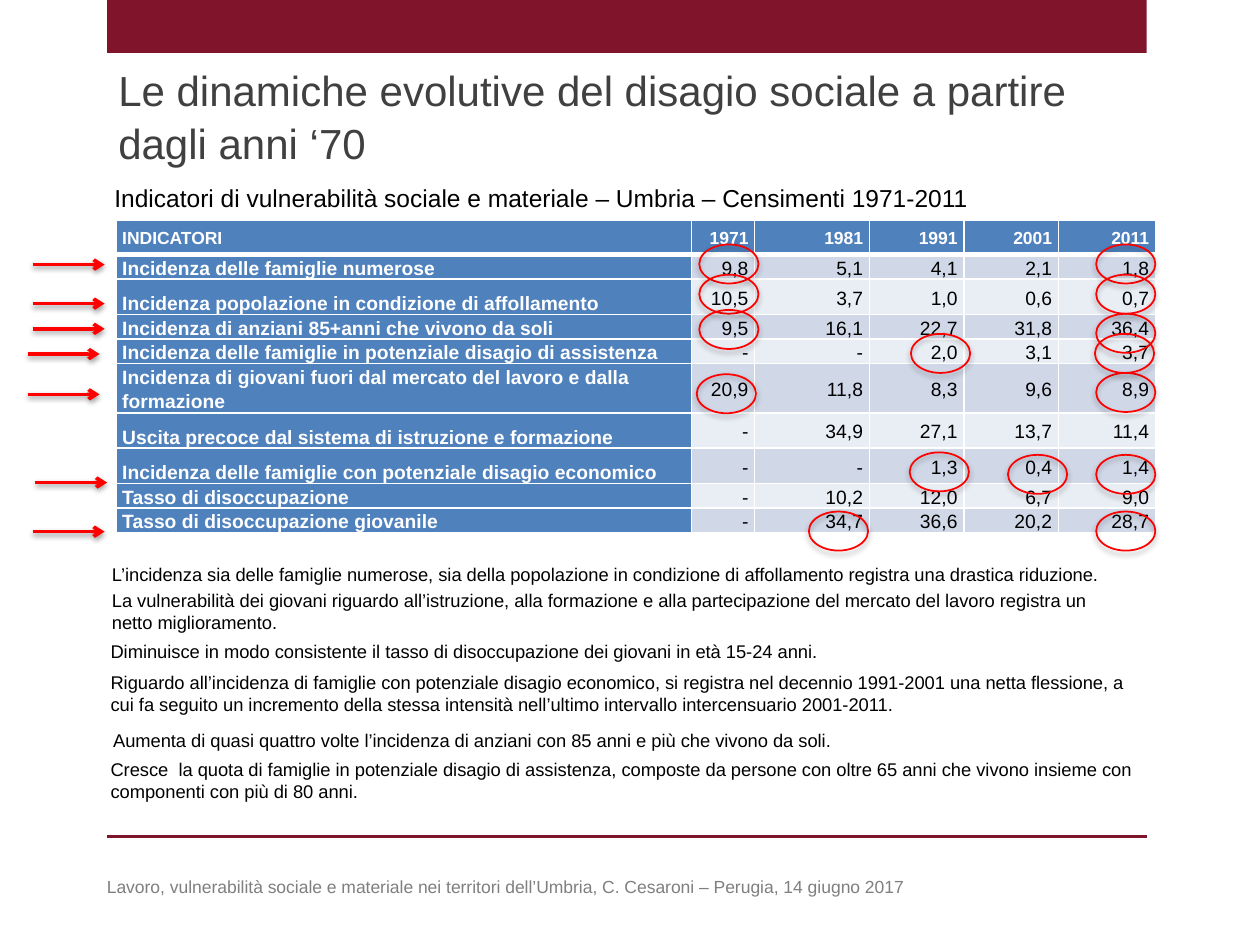
from lxml import etree
from pptx import Presentation, util as u
from pptx.dml import color
from pptx.enum import shapes, text
from pptx.oxml import ns

WINE, BLUE, RED, WHITE, BLACK = "7F142A", "4F81BD", "FF0000", "FFFFFF", "000000"
BANDS = "D0D8E8", "E9EDF4"
HEAD = ["INDICATORI", "1971", "1981", "1991", "2001", "2011"]
ROWS = [
    ["Incidenza delle famiglie numerose", "9,8", "5,1", "4,1", "2,1", "1,8"],
    ["Incidenza popolazione in condizione di affollamento", "10,5", "3,7", "1,0", "0,6", "0,7"],
    ["Incidenza di anziani 85+anni che vivono da soli", "9,5", "16,1", "22,7", "31,8", "36,4"],
    ["Incidenza delle famiglie in potenziale disagio di assistenza", "-", "-", "2,0", "3,1", "3,7"],
    ["Incidenza di giovani fuori dal mercato del lavoro e dalla formazione",
     "20,9", "11,8", "8,3", "9,6", "8,9"],
    ["Uscita precoce dal sistema di istruzione e formazione", "-", "34,9", "27,1", "13,7", "11,4"],
    ["Incidenza delle famiglie con potenziale disagio economico", "-", "-", "1,3", "0,4", "1,4"],
    ["Tasso di disoccupazione", "-", "10,2", "12,0", "6,7", "9,0"],
    ["Tasso di disoccupazione giovanile", "-", "34,7", "36,6", "20,2", "28,7"],
]
WIDTHS = [4.57, 0.5, 0.91, 0.75, 0.75, 0.77]
HEIGHTS = [0.27, 0.19, 0.28, 0.19, 0.18, 0.35, 0.28, 0.28, 0.19, 0.14]
NOTES = [
    (0.79, 4.42, ["L’incidenza sia delle famiglie numerose, sia della popolazione in condizione "
                  "di affollamento registra una drastica riduzione."]),
    (0.79, 4.63, ["La vulnerabilità dei giovani riguardo all’istruzione, alla formazione e alla "
                  "partecipazione del mercato del lavoro registra un", "netto miglioramento."]),
    (0.78, 5.03, ["Diminuisce in modo consistente il tasso di disoccupazione dei giovani in età "
                  "15-24 anni."]),
    (0.78, 5.28, ["Riguardo all’incidenza di famiglie con potenziale disagio economico, si registra "
                  "nel decennio 1991-2001 una netta flessione, a",
                  "cui fa seguito un incremento della stessa intensità nell’ultimo intervallo "
                  "intercensuario 2001-2011."]),
    (0.8, 5.74, ["Aumenta di quasi quattro volte l’incidenza di anziani con 85 anni e più che vivono "
                 "da soli."]),
    (0.78, 5.97, ["Cresce  la quota di famiglie in potenziale disagio di assistenza, composte da "
                  "persone con oltre 65 anni che vivono insieme con",
                  "componenti con più di 80 anni."]),
]
ARROWS = [(0.26, 2.1), (0.26, 2.41), (0.26, 2.61), (0.22, 2.81), (0.22, 3.13), (0.28, 3.83), (0.26, 4.22)]
RINGS = [(5.55, 1.94), (8.7, 1.94), (5.55, 2.18), (8.7, 2.18), (5.53, 2.97), (8.7, 2.96),
         (6.42, 4.06), (8.7, 4.06), (7.22, 3.59), (8, 3.61), (8.7, 3.61), (5.55, 2.46),
         (8.7, 2.49), (7.23, 2.65), (8.69, 2.65)]


def tint(code):
    return color.RGBColor.from_string(code)


def node(root, tag, **attrs):
    return etree.SubElement(root, ns.qn("a:" + tag), attrs)


class Deck:
    """Draw styled elements on the current slide."""

    def __init__(self, wide, high, font):
        self.prs = Presentation()
        self.prs.slide_width, self.prs.slide_height = u.Inches(wide), u.Inches(high)
        self.font = font
        self.slide = self.prs.slides.add_slide(self.prs.slide_layouts[6])

    def add(self, para, words, size, ink, bold=False):
        run = para.add_run()
        run.text = words
        run.font.name, run.font.size, run.font.bold = self.font, u.Pt(size), bold
        run.font.color.rgb = tint(ink)

    def label(self, left, top, wide, high, lines, size, ink=BLACK, lead=None):
        box = self.slide.shapes.add_textbox(*map(u.Inches, (left, top, wide, high)))
        frame = box.text_frame
        frame.word_wrap = True
        for i, line in enumerate(lines):
            para = frame.add_paragraph() if i else frame.paragraphs[0]
            para.line_spacing = lead
            self.add(para, line, size, ink)

    def shade(self, shape, alpha, dist):
        glow = node(node(shape._element.spPr, "effectLst"), "outerShdw", blurRad="40000",
                    dist=str(dist), dir="5400000", rotWithShape="0")
        node(node(glow, "srgbClr", val=BLACK), "alpha", val=str(alpha * 1000))

    def bar(self, left, top, wide, high, fill):
        shape = self.slide.shapes.add_shape(
            shapes.MSO_SHAPE.RECTANGLE, *map(u.Inches, (left, top, wide, high)))
        shape.shadow.inherit = False
        shape.fill.solid()
        shape.fill.fore_color.rgb = tint(fill)
        shape.line.fill.background()

    def ring(self, left, top):
        shape = self.slide.shapes.add_shape(
            shapes.MSO_SHAPE.OVAL, *map(u.Inches, (left, top, 0.47, 0.31)))
        shape.fill.background()
        shape.line.color.rgb = tint(RED)
        shape.line.width = u.Pt(1)
        self.shade(shape, 35, 23000)

    def rule(self, left, top, wide, ink):
        line = self.slide.shapes.add_connector(
            shapes.MSO_CONNECTOR.STRAIGHT, *map(u.Inches, (left, top, left + wide, top)))
        line.line.color.rgb = tint(ink)
        line.line.width = u.Pt(2)
        return line

    def plain(self, left, top, wide, ink):
        node(self.rule(left, top, wide, ink)._element.spPr, "effectLst")

    def arrow(self, left, top):
        line = self.rule(left, top, 0.57, RED)
        node(line._element.spPr.find(ns.qn("a:ln")), "tailEnd", type="arrow")
        self.shade(line, 38, 20000)

    def cell(self, cell, words, row, col):
        edge = cell._tc.get_or_add_tcPr()
        for side in "LRTB":
            thick = (row, side) in ((0, "B"), (1, "T"))
            line = node(edge, "ln" + side, w=str(u.Pt(3 if thick else 1)))
            node(node(line, "solidFill"), "srgbClr", val=WHITE)
        key = row == 0 or col == 0
        cell.fill.solid()
        cell.fill.fore_color.rgb = tint(BLUE if key else BANDS[(row - 1) % 2])
        cell.margin_left = cell.margin_right = u.Inches(0.05)
        cell.margin_top = cell.margin_bottom = 0
        low = row and not col
        cell.vertical_anchor = text.MSO_ANCHOR.BOTTOM if low else text.MSO_ANCHOR.MIDDLE
        para = cell.text_frame.paragraphs[0]
        para.alignment = text.PP_ALIGN.RIGHT if col else text.PP_ALIGN.LEFT
        para.line_spacing = 1.15
        self.add(para, words, 11 if row else 10, WHITE if key else BLACK, key)

    def grid(self, left, top, rows, widths, heights):
        size = sum(widths), sum(heights)
        table = self.slide.shapes.add_table(
            len(rows), len(widths), *map(u.Inches, (left, top, *size))).table
        for col, wide in zip(table.columns, widths):
            col.width = u.Inches(wide)
        for row, high in zip(table.rows, heights):
            row.height = u.Inches(high)
        for r, row in enumerate(rows):
            for c, words in enumerate(row):
                self.cell(table.cell(r, c), words, r, c)


def main():
    deck = Deck(10, 7.5, "Arial")
    deck.bar(0.85, 0, 8.25, 0.42, WINE)
    deck.plain(0.85, 6.64, 8.25, WINE)
    deck.grid(0.92, 1.75, [HEAD] + ROWS, WIDTHS, HEIGHTS)
    deck.label(0.81, 1.4, 7.4, 0.32,
               ["Indicatori di vulnerabilità sociale e materiale – Umbria – Censimenti 1971-2011"], 14)
    deck.label(0.84, 0.44, 8.25, 0.95,
               ["Le dinamiche evolutive del disagio sociale a partire dagli anni ‘70"],
               24, "404040", 1.05)
    for left, top, lines in NOTES:
        deck.label(left, top, 8.5, 0.11 + 0.17 * len(lines), lines, 10.5)
    deck.label(0.75, 6.9, 6.7, 0.27,
               ["Lavoro, vulnerabilità sociale e materiale nei territori dell’Umbria, "
                "C. Cesaroni – Perugia, 14 giugno 2017"], 10, "7F7F7F")
    for spot in ARROWS:
        deck.arrow(*spot)
    for spot in RINGS:
        deck.ring(*spot)
    deck.prs.save("out.pptx")


if __name__ == "__main__":
    main()
